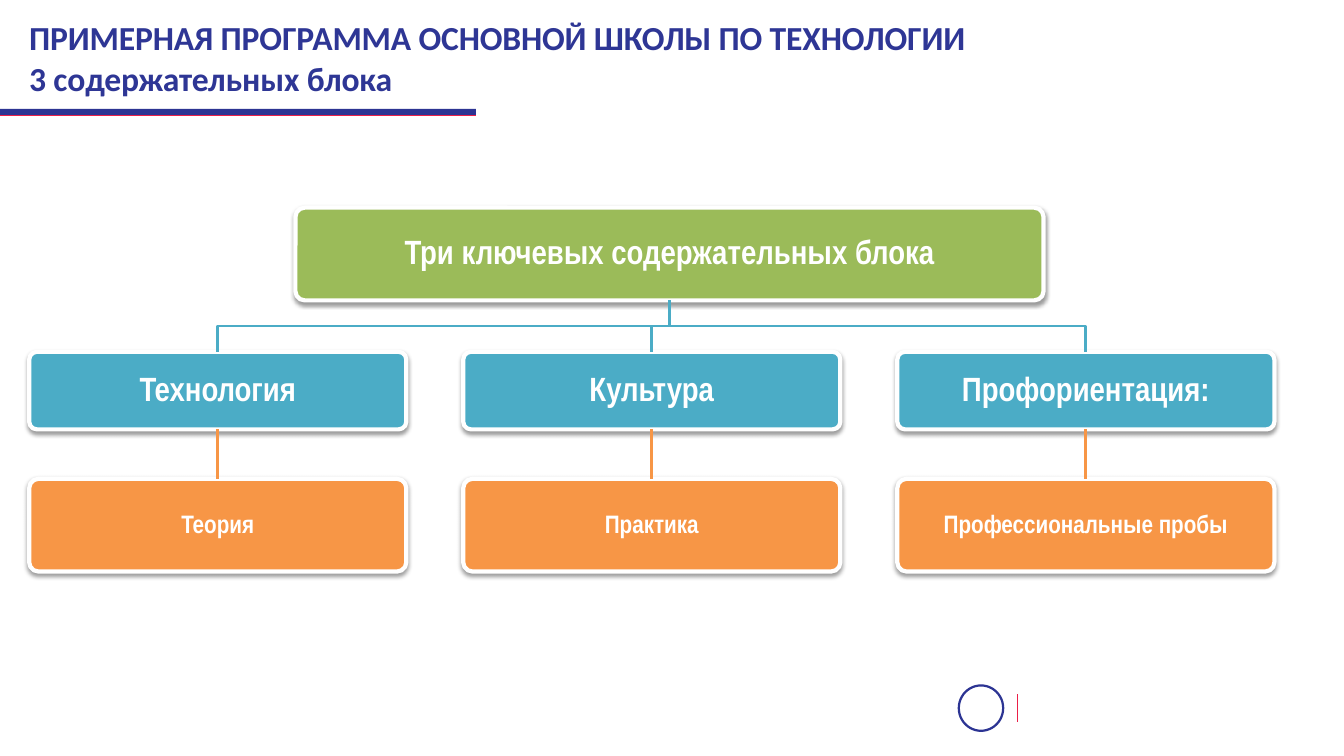
"""Build a slide with a three-branch diagram of programme content blocks."""
import pptx
import pptx.dml.color
import pptx.enum.shapes
import pptx.enum.text
import pptx.oxml
import pptx.oxml.ns
import pptx.oxml.xmlchemy
import pptx.util

Inches, Pt = pptx.util.Inches, pptx.util.Pt
SHAPE = pptx.enum.shapes.MSO_SHAPE
ALIGN = pptx.enum.text.PP_ALIGN
ANCHOR = pptx.enum.text.MSO_ANCHOR

TITLE = ["ПРИМЕРНАЯ ПРОГРАММА ОСНОВНОЙ ШКОЛЫ ПО ТЕХНОЛОГИИ", "3 содержательных блока"]
ROOT = "Три ключевых содержательных блока"
BRANCHES = [
    ("Технология", "Теория"),
    ("Культура", "Практика"),
    ("Профориентация:", "Профессиональные пробы"),
]
NAVY, RED, WHITE = "2C3493", "EB1F48", "FFFFFF"
GREEN, TEAL, ORANGE = "9BBB59", "4BACC6", "F79646"
BARS = [(1.14, 0.01, RED), (1.08, 0.06, NAVY)]
BAR_W = 4.72
ROOT_BOX = (2.93, 2.06, 7.42, 0.92)
FIRST_LEFT, LAST_LEFT, BOX_W = 0.29, 8.9, 3.74
BRANCH_TOP, BRANCH_H = 3.49, 0.77
LEAF_TOP, LEAF_H = 4.75, 0.92
SHADOW = (
    f'<a:outerShdw {pptx.oxml.ns.nsdecls("a")} blurRad="40000" dist="20000" '
    'dir="5400000" rotWithShape="0"><a:srgbClr val="000000">'
    '<a:alpha val="38000"/></a:srgbClr></a:outerShdw>'
)


def rgb(value):
    return pptx.dml.color.RGBColor.from_string(value)


def set_line(line, color, width):
    line.color.rgb = rgb(color)
    line.width = Pt(width)


def set_attrs(target, values):
    for name, value in values.items():
        setattr(target, name, value)


def set_font(font, name, size, color):
    set_attrs(font, {"name": name, "size": Pt(size), "bold": True})
    font.color.rgb = rgb(color)


def add_shape(slide, kind, box, fill=None, line=None):
    sp = slide.shapes.add_shape(kind, *map(Inches, box))
    sp.shadow.inherit = False
    if fill:
        sp.fill.solid()
        sp.fill.fore_color.rgb = rgb(fill)
    else:
        sp.fill.background()
    if line:
        set_line(sp.line, *line)
    else:
        sp.line.fill.background()
    return sp


def add_block(slide, text, box, fill, size, inset):
    sp = add_shape(slide, SHAPE.ROUNDED_RECTANGLE, box, fill, (WHITE, 3))
    sp.adjustments[0] = 0.1
    effects = sp._element.spPr.find(pptx.oxml.ns.qn("a:effectLst"))
    effects.append(pptx.oxml.parse_xml(SHADOW))
    tf = sp.text_frame
    sides = ("left", "top", "right", "bottom")
    set_attrs(tf, {f"margin_{side}": Inches(inset) for side in sides})
    set_attrs(tf, {"word_wrap": True, "vertical_anchor": ANCHOR.MIDDLE})
    p = tf.paragraphs[0]
    set_attrs(p, {"text": text, "alignment": ALIGN.CENTER, "line_spacing": 0.9})
    set_font(p.runs[0].font, "Arial Narrow", size, WHITE)
    return sp


def add_line(slide, color, width, start=(0, 0), end=(0, 0)):
    kind = pptx.enum.shapes.MSO_CONNECTOR.STRAIGHT
    line = slide.shapes.add_connector(kind, *map(Inches, start + end))
    set_line(line.line, color, width)
    line._element.spPr.append(pptx.oxml.xmlchemy.OxmlElement("a:effectLst"))
    return line


def add_elbow(slide, parent, child):
    x1, y1 = parent.left + parent.width // 2, parent.top + parent.height
    x2, y2 = child.left + child.width // 2, child.top
    middle = (y1 + y2) // 2
    builder = slide.shapes.build_freeform(x1, y1)
    builder.add_line_segments([(x1, middle), (x2, middle), (x2, y2)], close=False)
    sp = builder.convert_to_shape()
    sp.shadow.inherit = False
    sp.fill.background()
    set_line(sp.line, TEAL, 2)


def add_title(slide):
    sp = slide.shapes.add_textbox(*map(Inches, (0.28, 0.16, 12.06, 0.82)))
    tf = sp.text_frame
    set_attrs(tf, {"word_wrap": True, "margin_left": Inches(0.01), "margin_right": 0,
                   "margin_top": Inches(0.01), "margin_bottom": 0})
    p = tf.paragraphs[0]
    p.text = "\v".join(TITLE)
    for r in p.runs:
        set_font(r.font, "Calibri", 24, "2E3695")
        r._r.get_or_add_rPr().set("spc", "-10")


def main():
    prs = pptx.Presentation()
    set_attrs(prs, {"slide_width": Inches(13.33), "slide_height": Inches(7.5)})
    slide = prs.slides.add_slide(prs.slide_layouts[6])
    for top, height, color in BARS:
        add_shape(slide, SHAPE.RECTANGLE, (0, top, BAR_W, height), color)
    add_line(slide, RED, 0.8, (10.09, 6.89), (10.09, 7.16))
    add_shape(slide, SHAPE.OVAL, (9.51, 6.8, 0.44, 0.45), line=(NAVY, 1.6))
    add_title(slide)

    root = add_block(slide, ROOT, ROOT_BOX, GREEN, 24, 0.1)
    pitch = (LAST_LEFT - FIRST_LEFT) / (len(BRANCHES) - 1)
    for i, (name, detail) in enumerate(BRANCHES):
        left = FIRST_LEFT + i * pitch
        branch = add_block(slide, name, (left, BRANCH_TOP, BOX_W, BRANCH_H), TEAL, 24, 0.1)
        leaf = add_block(slide, detail, (left, LEAF_TOP, BOX_W, LEAF_H), ORANGE, 18, 0.07)
        add_elbow(slide, root, branch)
        link = add_line(slide, ORANGE, 2)
        link.begin_connect(branch, 2)
        link.end_connect(leaf, 0)
    prs.save("out.pptx")


if __name__ == "__main__":
    main()
